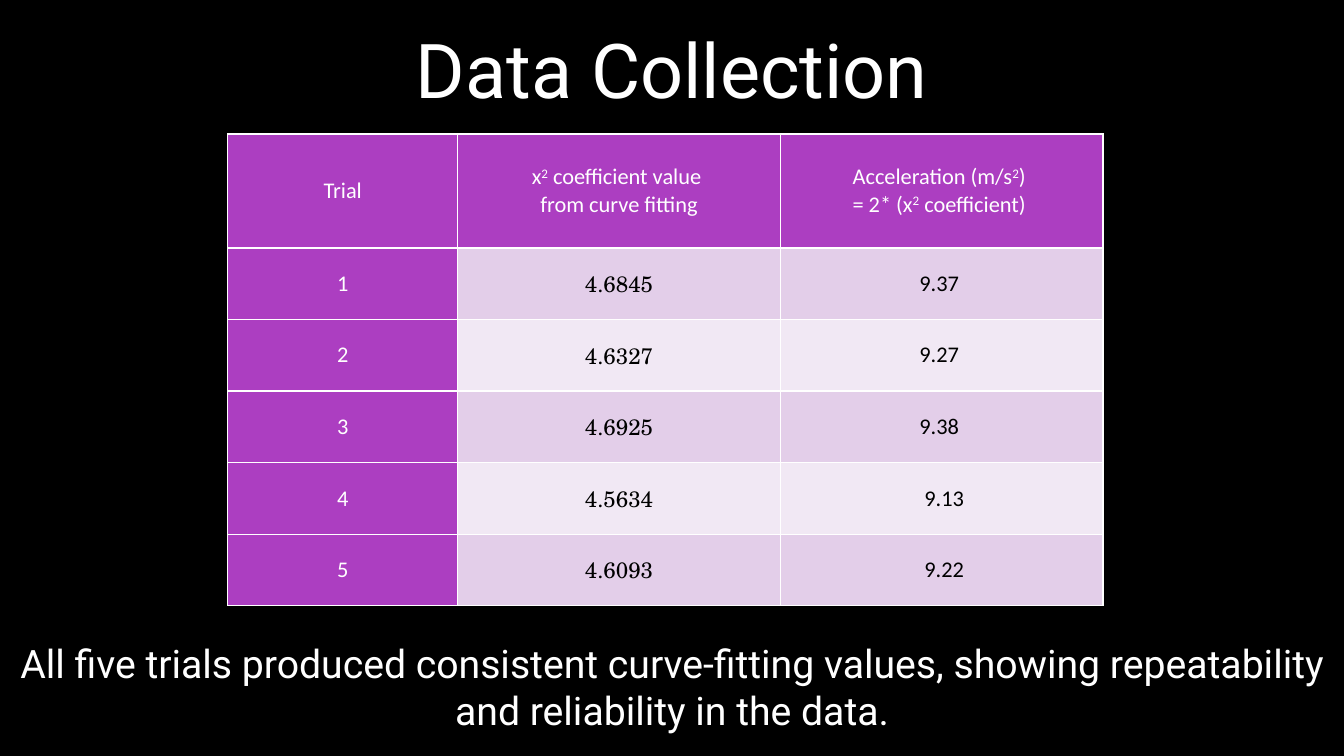
"""Build the Data Collection slide with its table of five trials."""
from lxml import etree
from pptx import Presentation
from pptx import util as u
from pptx.dml import color
from pptx.enum import text
from pptx.oxml import ns

WHITE, BLACK, PURPLE = "FFFFFF", "000000", "AC3EC1"
BANDS = ("E3CEE9", "F1E8F4")
SUPERSCRIPT = "30000"
COLUMN_WIDTHS = (2.28, 3.2, 3.2)
HEADER_HEIGHT, ROW_HEIGHT = 1.13, 0.71

HEADERS = (
    [["Trial"]],
    [["x", "^2", " coefficient value "], ["from curve fitting"]],
    [["Acceleration (m/s", "^2", ") "], ["= 2* (x", "^2", " coefficient) "]],
)
TRIALS = (
    ("1", "4.6845", "9.37 "),
    ("2", "4.6327", "9.27 "),
    ("3", "4.6925", "9.38 "),
    ("4", "4.5634", " 9.13"),
    ("5", "4.6093", " 9.22"),
)


def rgb(value):
    """Turn a hex string into a colour."""
    return color.RGBColor.from_string(value)


def write(para, lines, size, font, ink):
    """Write centred lines run by run, raising any run that starts with a caret."""
    para.alignment = text.PP_ALIGN.CENTER
    for index, line in enumerate(lines):
        if index:
            para.add_line_break()
        for piece in line:
            span = para.add_run()
            span.text = piece.removeprefix("^")
            span.font.size = u.Pt(size)
            span.font.name = font
            span.font.color.rgb = rgb(ink)
            if piece.startswith("^"):
                span.font._element.set("baseline", SUPERSCRIPT)


def add_caption(page, left, top, width, height, words, size, anchor):
    """Add a wrapped, centred line of white text in the given box."""
    box = page.shapes.add_textbox(*map(u.Inches, (left, top, width, height)))
    frame = box.text_frame
    frame.word_wrap = True
    frame.vertical_anchor = anchor
    write(frame.paragraphs[0], [[words]], size, "Roboto", WHITE)


def add_borders(cell):
    """Draw a thin white border on each side of a cell."""
    properties = cell._tc.get_or_add_tcPr()
    for side in "LRTB":
        line = etree.SubElement(properties, ns.qn(f"a:ln{side}"), w=str(u.Pt(1)))
        fill = etree.SubElement(line, ns.qn("a:solidFill"))
        etree.SubElement(fill, ns.qn("a:srgbClr"), val=WHITE)


def fill_cell(cell, lines, fill, font, ink):
    """Style one table cell and write its text."""
    cell.margin_left = cell.margin_right = u.Inches(0.07)
    cell.margin_top = cell.margin_bottom = 0
    cell.vertical_anchor = text.MSO_ANCHOR.MIDDLE
    add_borders(cell)
    cell.fill.solid()
    cell.fill.fore_color.rgb = rgb(fill)
    write(cell.text_frame.paragraphs[0], lines, 16, font, ink)


def add_trials(page, left, top, width, height):
    """Add the table of trials, with a purple header row and first column."""
    frame = page.shapes.add_table(
        len(TRIALS) + 1, len(HEADERS), *map(u.Inches, (left, top, width, height)))
    table = frame.table
    for column, column_width in zip(table.columns, COLUMN_WIDTHS):
        column.width = u.Inches(column_width)
    for index, row in enumerate(table.rows):
        row.height = u.Inches(ROW_HEIGHT if index else HEADER_HEIGHT)
    for column, lines in enumerate(HEADERS):
        fill_cell(table.cell(0, column), lines, PURPLE, "Calibri", WHITE)
    for row, values in enumerate(TRIALS, 1):
        band = BANDS[(row - 1) % 2]
        styles = ((PURPLE, "Calibri", WHITE),
                  (band, "TeX Gyre Schola", BLACK),
                  (band, "Calibri", BLACK))
        for column, (value, style) in enumerate(zip(values, styles)):
            fill_cell(table.cell(row, column), [[value]], *style)


def main():
    """Build and save the deck."""
    deck = Presentation()
    deck.slide_width, deck.slide_height = u.Inches(13.33), u.Inches(7.5)
    page = deck.slides.add_slide(deck.slide_layouts[6])
    page.background.fill.solid()
    page.background.fill.fore_color.rgb = rgb(BLACK)
    add_caption(page, 0, 0.1, 13.33, 1.16, "Data Collection", 54,
                text.MSO_ANCHOR.MIDDLE)
    add_trials(page, 2.26, 1.33, sum(COLUMN_WIDTHS),
               HEADER_HEIGHT + ROW_HEIGHT * len(TRIALS))
    add_caption(page, 0, 6.29, 13.33, 1.04,
                "All five trials produced consistent curve-fitting values, "
                "showing repeatability and reliability in the data.", 28,
                text.MSO_ANCHOR.TOP)
    deck.save("out.pptx")


if __name__ == "__main__":
    main()
